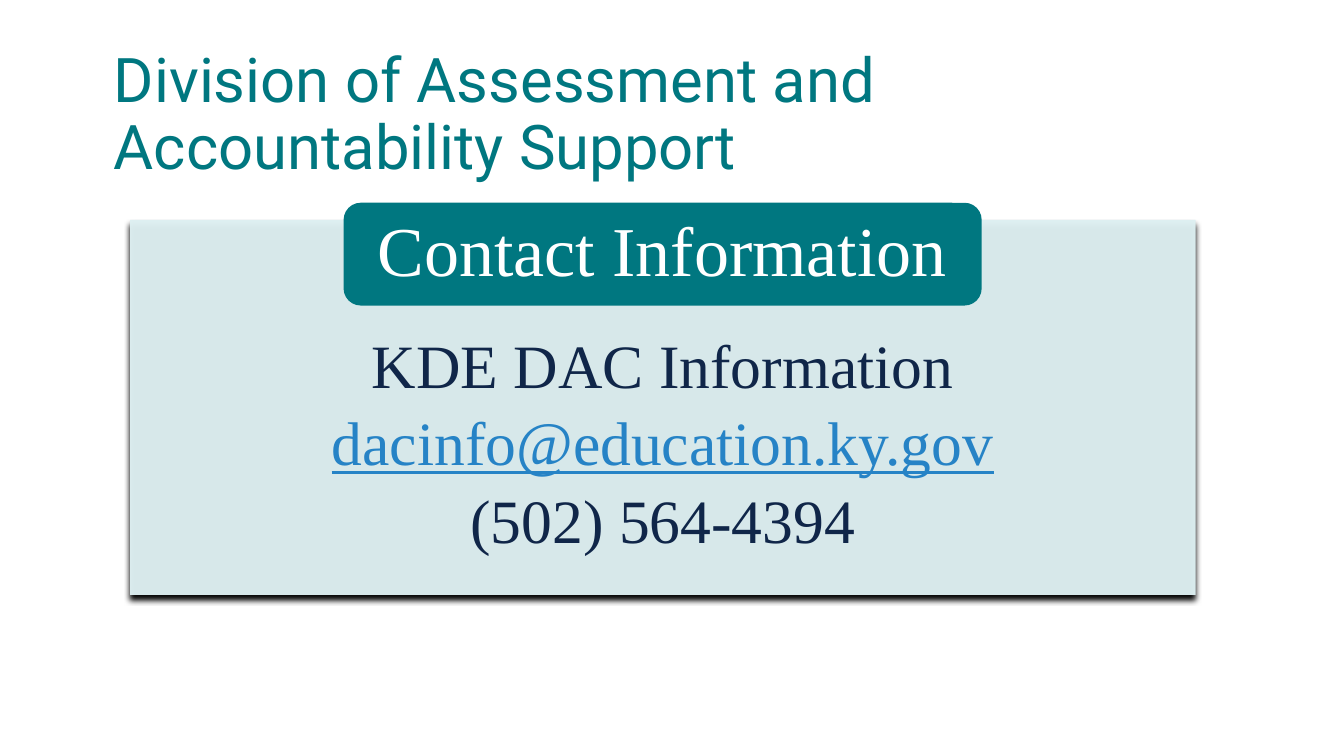
from dataclasses import dataclass

from lxml import etree
from pptx import Presentation, util as u
from pptx.dml.color import RGBColor
from pptx.enum import shapes, text
from pptx.oxml.ns import qn


@dataclass(frozen=True)
class Theme:
    """Colours, fonts and type sizes of the slide."""
    teal: str = "007780"
    pale: str = "DEF0F2"
    navy: str = "102649"
    blue: str = "2683C6"
    white: str = "FFFFFF"
    black: str = "000000"
    head: str = "Roboto"
    body: str = "Times New Roman"
    big: int = 44
    tab: int = 50


THEME = Theme()


def add_block(slide, kind, box, fill):
    """Add a plain filled shape without line or shadow."""
    block = slide.shapes.add_shape(kind, *map(u.Cm, box))
    block.shadow.inherit = False
    block.fill.solid()
    block.fill.fore_color.rgb = RGBColor.from_string(fill)
    block.line.fill.background()
    return block


def add_alpha(color, share):
    """Set the opacity of a colour element in percent."""
    etree.SubElement(color, qn("a:alpha"), val=str(share * 1000))


def add_shade(block, size):
    """Give a block a soft shadow that falls straight down."""
    effect = block._element.spPr.find(qn("a:effectLst"))
    reach = str(u.Pt(size))
    shade = etree.SubElement(effect, qn("a:outerShdw"), blurRad=reach, dist=reach,
                             dir="5400000", algn="ctr", rotWithShape="0")
    etree.SubElement(shade, qn("a:srgbClr"), val=THEME.black)


def set_frame(frame, inset, anchor):
    """Set wrapping, insets and vertical anchor of a text frame."""
    frame.word_wrap = True
    frame.vertical_anchor = anchor
    left, top, right, base = map(u.Cm, inset)
    frame.margin_left, frame.margin_top = left, top
    frame.margin_right, frame.margin_bottom = right, base


def add_lines(frame, lines, font, size, align, after=0):
    """Write each (words, colour, underline) line as a paragraph."""
    for rank, (words, color, under) in enumerate(lines):
        para = frame.add_paragraph() if rank else frame.paragraphs[0]
        para.alignment = align
        para.line_spacing = 0.9
        para.space_after = u.Pt(after)
        run = para.add_run()
        run.text = words
        run.font.name = font
        run.font.size = u.Pt(size)
        run.font.underline = under
        run.font.color.rgb = RGBColor.from_string(color)


def add_title(slide, words):
    """Add the slide title."""
    box = slide.shapes.add_textbox(u.Cm(2.62), u.Cm(1.09), u.Cm(28.3), u.Cm(3.68))
    set_frame(box.text_frame, (0.25, 0.13, 0.25, 0.13), text.MSO_ANCHOR.MIDDLE)
    add_lines(box.text_frame, [(words, THEME.teal, False)], THEME.head, THEME.big,
              text.PP_ALIGN.LEFT)


def add_panel(slide, lines):
    """Add the pale panel with the contact lines."""
    panel = add_block(slide, shapes.MSO_SHAPE.RECTANGLE, (3.28, 5.54, 26.85, 9.45),
                      THEME.pale)
    add_alpha(panel._element.spPr.find(qn("a:solidFill"))[0], 97)
    add_shade(panel, 4)
    set_frame(panel.text_frame, (2.08, 2.9, 2.08, 0.86), text.MSO_ANCHOR.TOP)
    add_lines(panel.text_frame, lines, THEME.body, THEME.big,
              text.PP_ALIGN.CENTER, after=8)


def add_tab(slide, words):
    """Add the rounded heading that overlaps the panel."""
    tab = add_block(slide, shapes.MSO_SHAPE.ROUNDED_RECTANGLE, (8.66, 5.11, 16.08, 2.59),
                    THEME.teal)
    set_frame(tab.text_frame, (0.71, 0, 0.71, 0), text.MSO_ANCHOR.MIDDLE)
    add_lines(tab.text_frame, [(words, THEME.white, False)], THEME.body, THEME.tab,
              text.PP_ALIGN.CENTER)


def main():
    """Build the contact slide and save it."""
    deck = Presentation()
    deck.slide_width, deck.slide_height = u.Cm(33.87), u.Cm(19.05)
    slide = deck.slides.add_slide(deck.slide_layouts[6])
    add_title(slide, "Division of Assessment and Accountability Support")
    add_panel(slide, [
        ("KDE DAC Information", THEME.navy, False),
        ("dacinfo@education.ky.gov", THEME.blue, True),
        ("(502) 564-4394", THEME.navy, False),
    ])
    add_tab(slide, "Contact Information")
    deck.save("out.pptx")


if __name__ == "__main__":
    main()
